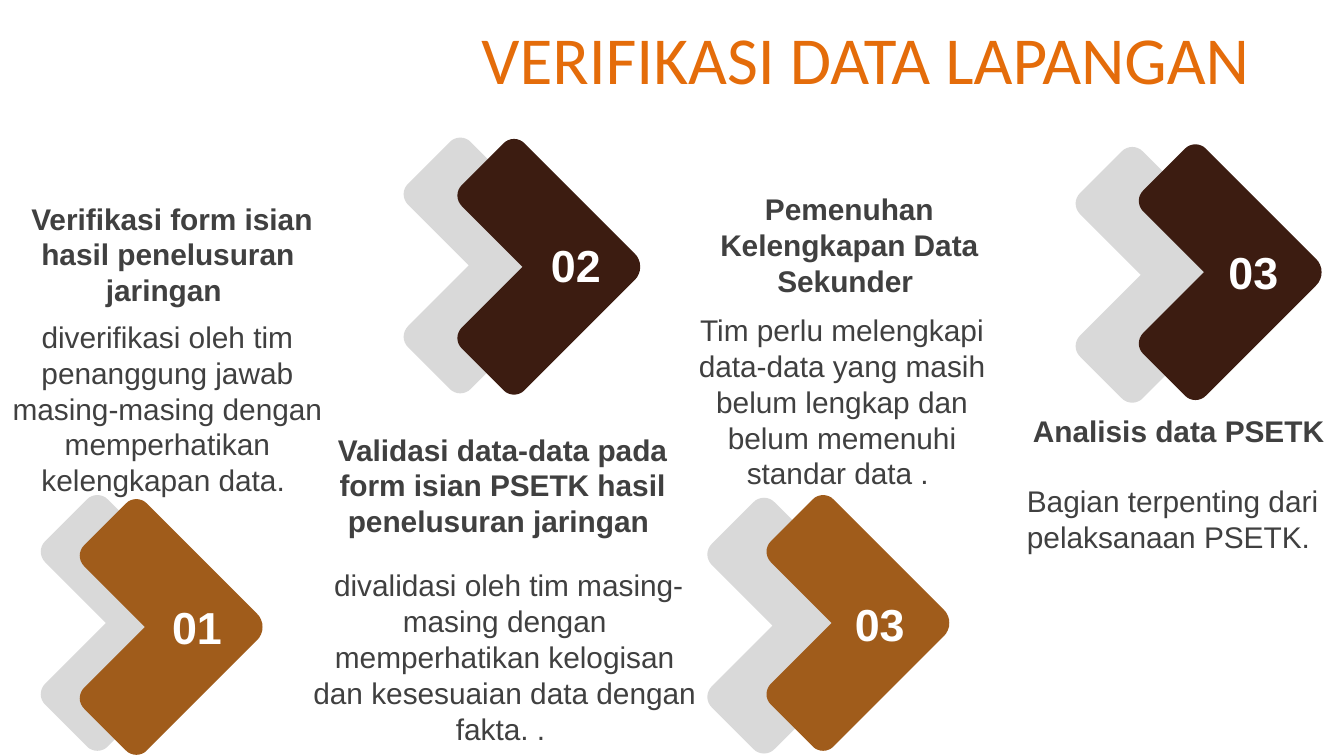
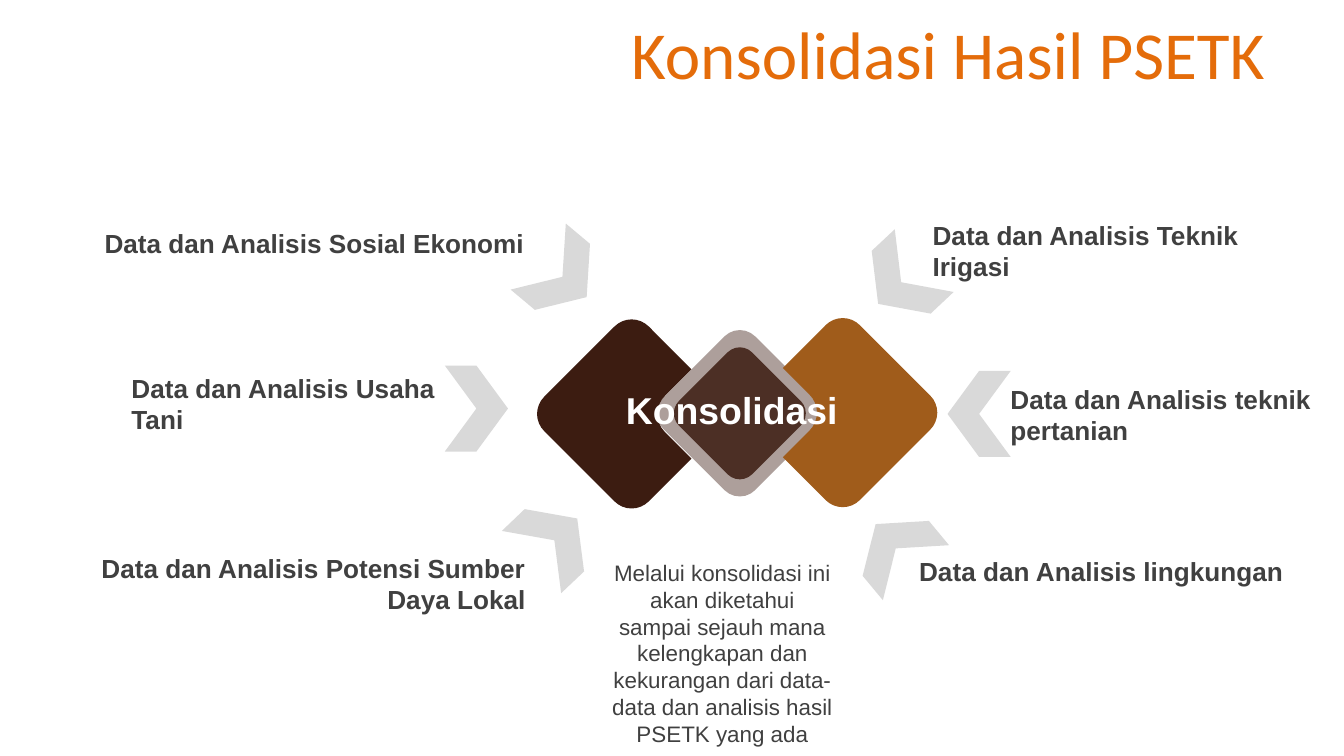
from math import cos, hypot, pi, sin

from lxml.etree import SubElement
from pptx import Presentation
from pptx.dml.color import RGBColor
from pptx.enum.shapes import MSO_SHAPE
from pptx.enum.text import MSO_ANCHOR, PP_ALIGN
from pptx.oxml.ns import qn
from pptx.util import Inches, Pt

COLORS = {
    "title": "E46C0A",
    "text": "404040",
    "white": "FFFFFF",
    "grey": "D9D9D9",
    "brown": "3C1C11",
    "orange": "A05C1B",
}

deck = Presentation()
deck.slide_width = Inches(10)
deck.slide_height = deck.slide_width * 9 // 16
CELL = deck.slide_width / 100  # one column or row of the layout grid
LEFT, CENTER, RIGHT = PP_ALIGN.LEFT, PP_ALIGN.CENTER, PP_ALIGN.RIGHT
MIDDLE = MSO_ANCHOR.MIDDLE


def add_text(page, text, area, size=16, bold=False, color="text", font="Arial",
             align=CENTER, anchor=MSO_ANCHOR.TOP, inset=(0, 0)):
    """Add a text box; area and inset are in grid cells."""
    box = page.shapes.add_textbox(*(int(value * CELL) for value in area))
    frame = box.text_frame
    frame.word_wrap = True
    frame.vertical_anchor = anchor
    frame.margin_left = frame.margin_right = int(inset[0] * CELL)
    frame.margin_top = frame.margin_bottom = int(inset[1] * CELL)
    para = frame.paragraphs[0]
    para.alignment = align
    span = para.add_run()
    span.text = text
    span.font.name, span.font.size, span.font.bold = font, Pt(size), bold
    span.font.color.rgb = RGBColor.from_string(COLORS[color])


def add_rounded(page, corners, left, top, rotation, color):
    """Add a right-angled outline whose corners are (x, y, radius) in cells."""
    points = []
    for index, (x, y, radius) in enumerate(corners):
        if not radius:
            points.append((x, y))
            continue
        sides = []
        for near_x, near_y, _ in (corners[index - 1], corners[(index + 1) % len(corners)]):
            length = hypot(near_x - x, near_y - y)
            sides.append(((near_x - x) / length, (near_y - y) / length))
        (back_x, back_y), (next_x, next_y) = sides
        for step in range(9):
            across, along = 1 - cos(step * pi / 16), 1 - sin(step * pi / 16)
            points.append((x + radius * (next_x * across + back_x * along),
                           y + radius * (next_y * across + back_y * along)))
    points = [(x * 1000, y * 1000) for x, y in points]
    builder = page.shapes.build_freeform(*points[0], scale=CELL / 1000)
    builder.add_line_segments(points[1:], close=True)
    shape = builder.convert_to_shape(int(left * CELL), int(top * CELL))
    shape.rotation = rotation
    shape.shadow.inherit = False
    shape.fill.solid()
    shape.fill.fore_color.rgb = RGBColor.from_string(COLORS[color])
    shape.line.fill.background()


TEXT_INSET = (1, 0.5)
TITLES = [
    ("VERIFIKASI DATA LAPANGAN ", (4.9, 0.1, 90.2, 8.4)),
    ("Konsolidasi Hasil PSETK", (4.9, -0.3, 90.2, 8.4)),
]
pages = []
for title, area in TITLES:
    page = deck.slides.add_slide(deck.slide_layouts[6])
    add_text(page, title, area, size=36, color="title", font="Calibri",
             align=RIGHT, anchor=MIDDLE, inset=TEXT_INSET)
    pages.append(page)
steps_page, summary_page = pages

# Steps: grey arrows behind, coloured arrows in front
ARROW = [(7.5, 0, 1.1), (14.1, 0, 1.1), (14.1, 14.1, 1.4),
         (0, 14.1, 1.1), (0, 7.5, 1.1), (7.5, 7.5, 0)]
BACK_ARROWS = [(0.2, 39.3), (27.2, 12.7), (49.8, 39.5), (77.2, 13.4)]
FRONT_ARROWS = [(3.1, 39.6), (31.2, 12.8), (54.2, 39.3), (81.9, 13.2)]
for left, top in BACK_ARROWS:
    add_rounded(steps_page, ARROW, left, top, 315, "grey")
for index, (left, top) in enumerate(FRONT_ARROWS):
    add_rounded(steps_page, ARROW, left, top, 315, ("orange", "brown")[index % 2])

# Steps: number, heading and description of each
STEPS = [
    ("01", (11.4, 44.6),
     " Verifikasi form isian hasil penelusuran jaringan ", (0.5, 14.9, 24, 8.1),
     "diverifikasi oleh tim penanggung jawab masing-masing dengan "
     "memperhatikan kelengkapan data. ", (0.4, 23.7, 24.1, 16.2)),
    ("02", (39.6, 17.7),
     "Validasi data-data pada form isian PSETK hasil penelusuran jaringan ",
     (22.9, 32.1, 29, 9.4),
     " divalidasi oleh tim masing-masing dengan memperhatikan kelogisan "
     "dan kesesuaian data dengan fakta. . ", (23, 42.2, 29.1, 15.7)),
    ("03", (62.2, 44.4),
     "Pemenuhan Kelengkapan Data Sekunder ", (52.2, 14.2, 22, 14.1),
     "Tim perlu melengkapi data-data yang masih belum lengkap dan belum "
     "memenuhi standar data . ", (51.6, 23.2, 22.1, 13.5)),
    ("03", (90, 18.2),
     "Analisis data PSETK ", (76.7, 30.7, 22, 4.8),
     "Bagian terpenting dari pelaksanaan PSETK. ", (76.2, 35.9, 22.1, 5.7)),
]
for number, place, heading, heading_area, description, description_area in STEPS:
    add_text(steps_page, description, description_area)
    add_text(steps_page, heading, heading_area, bold=True)
    add_text(steps_page, number, (*place, 6.5, 4), size=24, bold=True, color="white")

# Summary: translucent centre and grey chevrons
CENTRE, CHEVRON = MSO_SHAPE.ROUNDED_RECTANGLE, MSO_SHAPE.CHEVRON
PRESETS = [
    (CENTRE, (50.2, 25.9, 9.7, 9.7), 315, "brown", 42),
    (CENTRE, (51.2, 26.9, 7.7, 7.7), 315, "brown", 85),
]
CHEVRONS = [(64.3, 37.6, 230.3), (38.9, 37, 316.4), (39.5, 17.4, 39.9),
            (64.7, 17.8, 136.8), (33.1, 27.2, 0), (70.5, 27.6, 180)]
PRESETS += [(CHEVRON, (left, top, 4.7, 6.4), rotation, "grey", 100)
            for left, top, rotation in CHEVRONS]
for preset, area, rotation, color, opacity in PRESETS:
    shape = summary_page.shapes.add_shape(preset, *(int(value * CELL) for value in area))
    shape.rotation = rotation
    shape.shadow.inherit = False
    shape.fill.solid()
    shape.fill.fore_color.rgb = RGBColor.from_string(COLORS[color])
    shape.line.fill.background()
    if opacity < 100:
        tint = shape._element.spPr.find(qn("a:solidFill"))[0]
        SubElement(tint, qn("a:alpha")).set("val", str(opacity * 1000))

# Summary: notched diamonds on both sides of the centre
DIAMOND = [(0, 0, 1.8), (11, 0, 1.8), (11, 6.3, 0),
           (6.3, 6.3, 1.9), (6.3, 11, 0), (0, 11, 1.8)]
add_rounded(summary_page, DIAMOND, 57.2, 25.2, 135, "orange")
add_rounded(summary_page, DIAMOND, 41.5, 25.3, 315, "brown")

# Summary: labels
LABELS = [
    ("Data dan Analisis Sosial Ekonomi", (1.2, 16.4, 38.8, 3.4), RIGHT),
    ("Data dan Analisis Potensi Sumber Daya Lokal", (4.8, 40.6, 35.3, 5.7), RIGHT),
    ("Data dan Analisis Teknik Irigasi", (68.4, 15.8, 30.5, 5.7), LEFT),
    ("Data dan Analisis lingkungan", (67.4, 40.8, 32.5, 3.4), LEFT),
    ("Data dan Analisis teknik pertanian", (74.2, 28, 25.3, 5.7), LEFT),
    ("Data dan Analisis Usaha Tani", (8.8, 27.2, 25.3, 5.7), LEFT),
]
for label, area, align in LABELS:
    add_text(summary_page, label, area, size=14, bold=True, align=align, inset=TEXT_INSET)
add_text(summary_page, "Konsolidasi", (44.5, 28.3, 19.9, 4.4), size=20, bold=True,
         color="white", inset=TEXT_INSET)
add_text(summary_page, "Melalui konsolidasi ini akan diketahui sampai sejauh mana "
         "kelengkapan dan kekurangan dari data-data dan analisis hasil PSETK yang ada",
         (44.5, 41.1, 18.5, 15.1), size=12, inset=TEXT_INSET)

deck.save("out.pptx")
